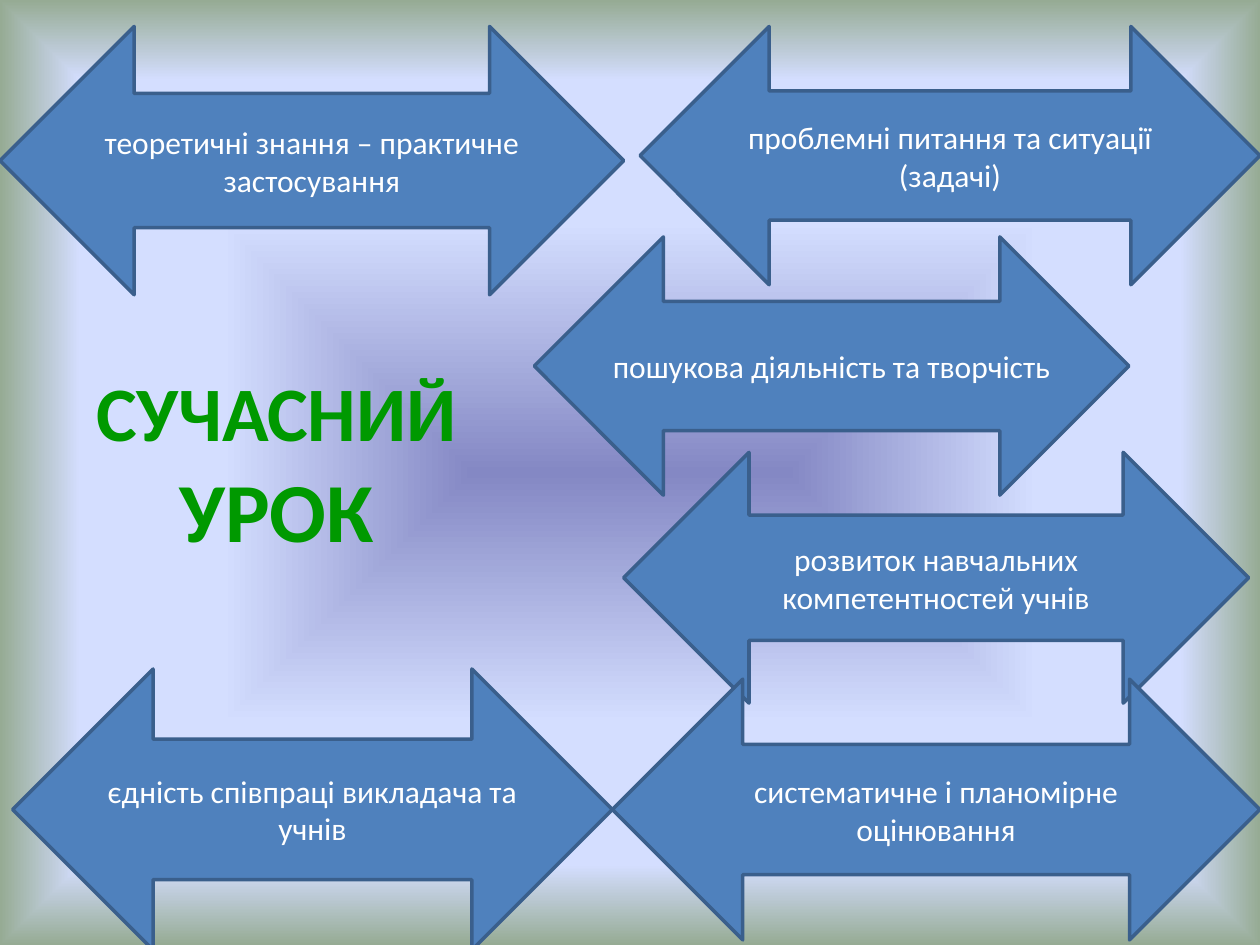
import lxml.etree
import pptx
import pptx.dml.color
import pptx.enum.shapes
import pptx.enum.text
import pptx.oxml.ns
import pptx.util

Inches = pptx.util.Inches
FONT = "Calibri"
COLORS = {
    "title": "009900",
    "arrow": "4F81BD",
    "outline": "3A5F8C",
    "label": "FFFFFF",
    "center": "8488C4",
    "middle": "D4DEFF",
    "edge": "96AB94",
}
BACKGROUND_STOPS = [(0, "center"), (53, "middle"), (83, "middle"), (100, "edge")]
TITLE_BOX = (0.39, 2.34, 3.61, 2.6)
TITLE_RUNS = [("СУЧАСНИЙ", 44), (" УРОК", 48)]
ARROWS = [
    ("теоретичні знання – практичне застосування", (0, 0.21, 4.95, 2.13)),
    ("пошукова діяльність та творчість", (4.24, 1.88, 4.72, 2.05)),
    ("розвиток навчальних компетентностей учнів", (4.95, 3.59, 4.96, 1.99)),
    ("проблемні питання та ситуації (задачі)", (5.08, 0.21, 4.92, 2.05)),
    ("систематичне і планомірне оцінювання", (4.86, 5.39, 5.14, 2.07)),
    ("єдність співпраці викладача та учнів", (0.1, 5.31, 4.76, 2.23)),
]


def rgb(name):
    """Return the named palette colour."""
    return pptx.dml.color.RGBColor.from_string(COLORS[name])


def write_centered(shape, runs, color, bold=False):
    """Write (text, size) runs as one paragraph in the middle of a shape."""
    frame = shape.text_frame
    frame.word_wrap = True
    frame.auto_size = pptx.enum.text.MSO_AUTO_SIZE.NONE
    frame.vertical_anchor = pptx.enum.text.MSO_ANCHOR.MIDDLE
    paragraph = frame.paragraphs[0]
    paragraph.alignment = pptx.enum.text.PP_ALIGN.CENTER
    for text, size in runs:
        run = paragraph.add_run()
        run.text = text
        run.font.name = FONT
        run.font.size = pptx.util.Pt(size)
        run.font.bold = bold
        run.font.color.rgb = rgb(color)


def paint_background(slide):
    """Fill the background with a gradient spreading from its centre."""
    qn = pptx.oxml.ns.qn
    slide.background.fill.gradient()
    gradient = slide.element.find(".//" + qn("a:gradFill"))
    for child in list(gradient):
        gradient.remove(child)
    stops = lxml.etree.SubElement(gradient, qn("a:gsLst"))
    for percent, color in BACKGROUND_STOPS:
        stop = lxml.etree.SubElement(stops, qn("a:gs"), pos=str(percent * 1000))
        lxml.etree.SubElement(stop, qn("a:srgbClr"), val=COLORS[color])
    spread = lxml.etree.SubElement(gradient, qn("a:path"), path="shape")
    center = {side: "50000" for side in "ltrb"}
    lxml.etree.SubElement(spread, qn("a:fillToRect"), center)


def place_title(slide, box):
    """Move the title placeholder into the box and write the title."""
    title = slide.shapes.title
    title.left, title.top, title.width, title.height = map(Inches, box)
    write_centered(title, TITLE_RUNS, "title", bold=True)


def add_arrow(slide, text, box):
    """Add a labelled double-headed arrow filling the box."""
    arrow = slide.shapes.add_shape(
        pptx.enum.shapes.MSO_SHAPE.LEFT_RIGHT_ARROW, *map(Inches, box)
    )
    arrow.shadow.inherit = False
    arrow.fill.solid()
    arrow.fill.fore_color.rgb = rgb("arrow")
    arrow.line.color.rgb = rgb("outline")
    arrow.line.width = pptx.util.Pt(2)
    write_centered(arrow, [(text, 18)], "label")


def main():
    """Build the slide and save it."""
    presentation = pptx.Presentation()
    presentation.slide_width = Inches(10)
    presentation.slide_height = Inches(7.5)
    slide = presentation.slides.add_slide(presentation.slide_layouts[5])
    paint_background(slide)
    place_title(slide, TITLE_BOX)
    for text, box in ARROWS:
        add_arrow(slide, text, box)
    presentation.save("out.pptx")


if __name__ == "__main__":
    main()
